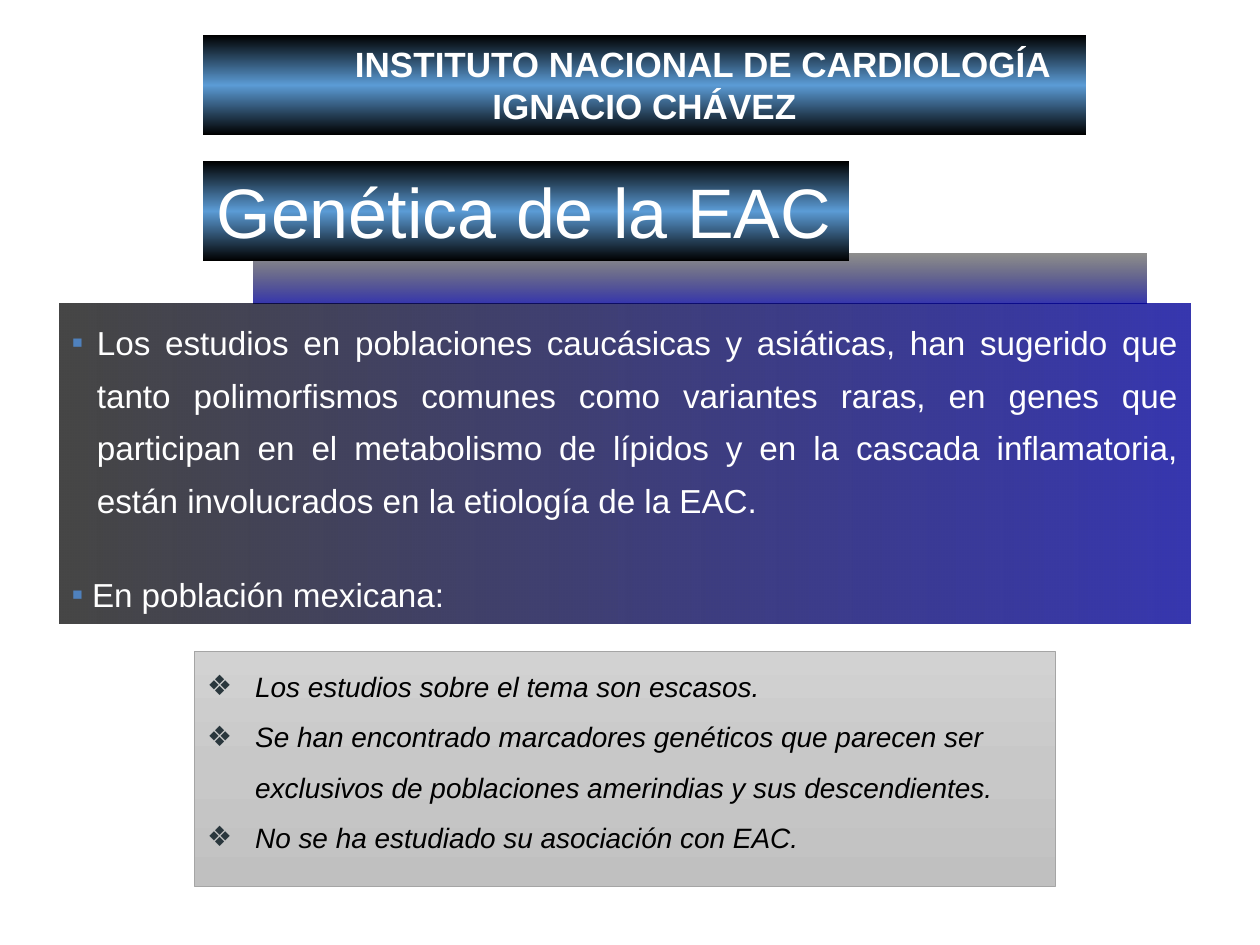
from lxml import etree
from pptx import Presentation
from pptx.enum import shapes, text
from pptx.oxml import ns
from pptx.util import Pt
from pptx.dml.color import RGBColor

COLORS = {
    "black": "000000", "white": "FFFFFF", "navy": "000099", "blue": "5B9BD5",
    "bullet": "4F81BD", "diamond": "2A373D", "border": "A5A5A5",
    "light": "D2D2D2", "medium": "C8C8C8", "dark": "C0C0C0",
}
FONT = "Arial"
LEFT, CENTER, JUSTIFY = text.PP_ALIGN.LEFT, text.PP_ALIGN.CENTER, text.PP_ALIGN.JUSTIFY

BANNER = [(0, "black", 100), (50, "blue", 100), (100, "black", 100)]
BAND = [(0, "black", 44), (100, "navy", 80)]
PANEL = [(0, "black", 73), (100, "navy", 79)]
CARD = [(0, "light", 100), (50, "medium", 100), (100, "dark", 100)]

INSTITUTE = [("INSTITUTO NACIONAL DE CARDIOLOGÍA", 67), ("IGNACIO CHÁVEZ", 0)]
TITLE = "Genética de la EAC"
FINDINGS = [
    ("Los estudios en poblaciones caucásicas y asiáticas, han sugerido que tanto "
     "polimorfismos comunes como variantes raras, en genes que participan en el "
     "metabolismo de lípidos y en la cascada inflamatoria, están involucrados en "
     "la etiología de la EAC.", 14.4),
    ("En población mexicana:", 11.6),
]
MEXICO = [
    "Los estudios sobre el tema son escasos.",
    "Se han encontrado marcadores genéticos que parecen ser "
    "exclusivos de poblaciones amerindias y sus descendientes.",
    "No se ha estudiado su asociación con EAC.",
]


def color(name):
    return RGBColor.from_string(COLORS[name])


def place(shape, left, top, width, height, stops, angle):
    shape.left, shape.top, shape.width, shape.height = map(Pt, (left, top, width, height))
    shape.fill.gradient()
    gradient = shape._element.spPr.find(ns.qn("a:gradFill"))
    stop_list = gradient.find(ns.qn("a:gsLst"))
    for old in list(stop_list):
        stop_list.remove(old)
    for position, name, opacity in stops:
        stop = etree.SubElement(stop_list, ns.qn("a:gs"), pos=str(position * 1000))
        fill = etree.SubElement(stop, ns.qn("a:srgbClr"), val=COLORS[name])
        if opacity < 100:
            etree.SubElement(fill, ns.qn("a:alpha"), val=str(opacity * 1000))
    gradient.find(ns.qn("a:lin")).set("ang", str(angle * 60000))


def prepare(shape, side=7.2, top=3.6):
    frame = shape.text_frame
    frame.word_wrap = True
    frame.auto_size = text.MSO_AUTO_SIZE.NONE
    frame.vertical_anchor = text.MSO_ANCHOR.TOP
    frame.margin_left = frame.margin_right = Pt(side)
    frame.margin_top = frame.margin_bottom = Pt(top)
    return frame


def write(frame, index, content, size, ink, align=LEFT, margin=0, bullet=None,
          spacing=1.0, before=0, bold=False, italic=False):
    paragraph = frame.paragraphs[0] if index == 0 else frame.add_paragraph()
    properties = paragraph._p.get_or_add_pPr()
    properties.set("marL", str(int(Pt(margin))))
    properties.set("indent", str(-int(Pt(margin)) if bullet else 0))
    paragraph.alignment = align
    paragraph.line_spacing = spacing
    paragraph.space_before = Pt(before if index else 0)
    paragraph.space_after = Pt(0)
    if bullet:
        symbol, name = bullet
        tint = etree.SubElement(properties, ns.qn("a:buClr"))
        etree.SubElement(tint, ns.qn("a:srgbClr"), val=COLORS[name])
        etree.SubElement(properties, ns.qn("a:buFont"), typeface=FONT)
        etree.SubElement(properties, ns.qn("a:buChar"), char=symbol)
    else:
        etree.SubElement(properties, ns.qn("a:buNone"))
    run = paragraph.add_run()
    run.text = content
    run.font.name, run.font.size = FONT, Pt(size)
    run.font.bold, run.font.italic = bold, italic
    run.font.color.rgb = color(ink)


def add_rectangle(slide):
    shape = slide.shapes.add_shape(shapes.MSO_SHAPE.RECTANGLE, 0, 0, 0, 0)
    shape.shadow.inherit = False
    shape.line.fill.background()
    return shape


def main():
    presentation = Presentation()
    presentation.slide_width, presentation.slide_height = Pt(720), Pt(540)
    slide = presentation.slides.add_slide(presentation.slide_layouts[3])
    title, findings, mexico = list(slide.placeholders)[:3]
    band, institute = add_rectangle(slide), add_rectangle(slide)

    place(band, 144.7, 144.7, 510.5, 28.8, BAND, 90)
    place(findings, 33.8, 173.5, 646.6, 182.9, PANEL, 0)
    place(institute, 115.9, 20.2, 504.7, 56.9, BANNER, 90)
    place(title, 115.9, 92.2, 369.4, 56.9, BANNER, 90)
    place(mexico, 111.2, 372.2, 491.8, 134.6, CARD, 90)
    mexico.line.color.rgb = color("border")
    mexico.line.width = Pt(0.5)

    frame = prepare(institute, 7.9, 4.3)
    for index, (content, margin) in enumerate(INSTITUTE):
        write(frame, index, content, 20, "white", CENTER, margin, bold=True)
    write(prepare(title, 7.9, 4.3), 0, TITLE, 40, "white")
    frame = prepare(findings)
    for index, (content, margin) in enumerate(FINDINGS):
        write(frame, index, content, 19, "white", JUSTIFY, margin,
              ("▪", "bullet"), Pt(30), 24)
    frame = prepare(mexico, top=0.7)
    for index, content in enumerate(MEXICO):
        write(frame, index, content, 16, "black", LEFT, 27.4,
              ("❖", "diamond"), 1.5, italic=True)

    for shape in (band, findings, institute, title, mexico):
        slide.shapes._spTree.append(shape._element)
    presentation.save("out.pptx")


if __name__ == "__main__":
    main()
